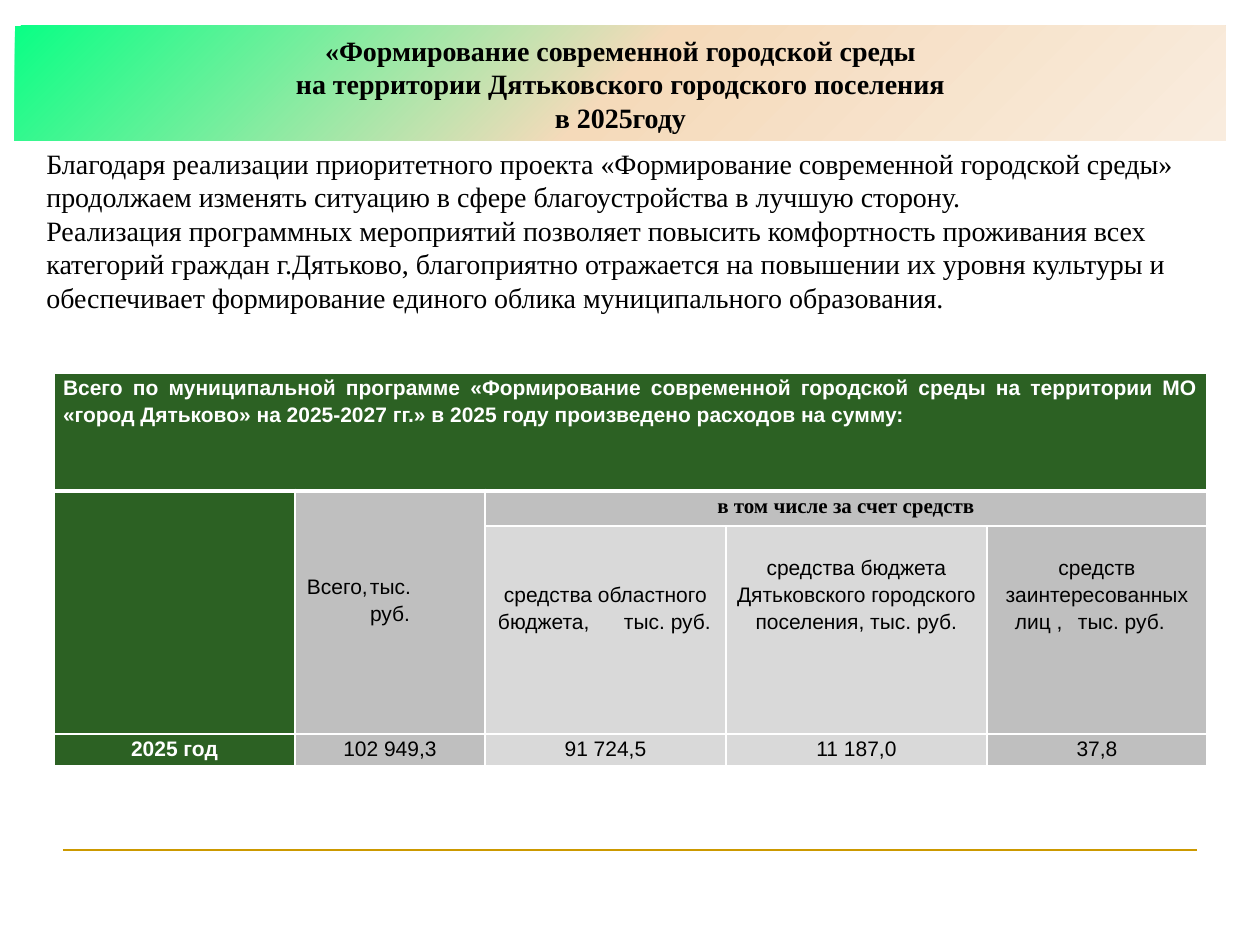
from copy import deepcopy

from lxml.etree import SubElement
from pptx import Presentation
from pptx.dml.color import RGBColor
from pptx.enum.shapes import MSO_CONNECTOR as Connector, MSO_SHAPE as Shape
from pptx.enum.text import MSO_ANCHOR as Anchor, PP_ALIGN as Align
from pptx.oxml.ns import qn
from pptx.util import Pt

PX = 914400 // 126
BLACK = RGBColor(0x00, 0x00, 0x00)
WHITE = RGBColor(0xFF, 0xFF, 0xFF)
GOLD = RGBColor(0xCC, 0x99, 0x00)
GREEN = RGBColor(0x2C, 0x61, 0x23)
GREY = RGBColor(0xBF, 0xBF, 0xBF)
LIGHT = RGBColor(0xD9, 0xD9, 0xD9)
MINT = RGBColor(0x0A, 0xFF, 0x85)
PEACH = RGBColor(0xF5, 0xDA, 0xBA)
CREAM = RGBColor(0xF9, 0xEC, 0xDE)
SERIF, SANS = "Times New Roman", "Arial"


def write(frame, lines, align, size, font, color, bold=False, spacing=None):
    """Write one paragraph per line; a line with a tab is (text, indent, stop)."""
    frame.word_wrap = True
    for index, line in enumerate(lines):
        paragraph = frame.paragraphs[0] if index == 0 else frame.add_paragraph()
        paragraph.alignment = align
        paragraph.line_spacing = spacing
        if isinstance(line, tuple):
            line, indent, stop = line
            paragraph.alignment = Align.LEFT
            properties = paragraph._p.get_or_add_pPr()
            properties.set("marL", str(indent * PX))
            properties.set("indent", "0")
            tabs = SubElement(properties, qn("a:tabLst"))
            SubElement(tabs, qn("a:tab"), pos=str(stop * PX), algn="l")
        run = paragraph.add_run()
        run.text = line
        run.font.name = font
        run.font.size = Pt(size)
        run.font.bold = bold
        run.font.color.rgb = color


def add_borders(cell, top, bottom):
    properties = cell._tc.get_or_add_tcPr()
    for side, width in (("L", 1), ("R", 1), ("T", top), ("B", bottom)):
        line = SubElement(properties, qn(f"a:ln{side}"), w=str(Pt(width)))
        fill = SubElement(line, qn("a:solidFill"))
        SubElement(fill, qn("a:srgbClr"), val=str(WHITE))


presentation = Presentation()
presentation.slide_width = 1260 * PX
presentation.slide_height = 945 * PX
slide = presentation.slides.add_slide(presentation.slide_layouts[6])

# Footer rule
rule = slide.shapes.add_connector(Connector.STRAIGHT, 63 * PX, 850 * PX, 1197 * PX, 850 * PX)
rule.line.color.rgb = GOLD
rule.line.width = Pt(1.5)
SubElement(rule._element.spPr, qn("a:effectLst"))

# Title banner with a three-stop gradient
banner = slide.shapes.add_shape(Shape.RECTANGLE, 15 * PX, 26 * PX, 1211 * PX, 115 * PX)
banner.shadow.inherit = False
banner.line.fill.background()
banner.fill.gradient()
banner.fill.gradient_angle = 315
stop_list = banner._element.spPr.find(qn("a:gradFill")).find(qn("a:gsLst"))
stop_list.append(deepcopy(stop_list[0]))
for stop, position, color in zip(banner.fill.gradient_stops, (0, 0.5, 1), (MINT, PEACH, CREAM)):
    stop.position = position
    stop.color.rgb = color
banner.text_frame.vertical_anchor = Anchor.MIDDLE
write(banner.text_frame, [
    "«Формирование современной городской среды",
    "на территории Дятьковского городского поселения",
    "в 2025году",
], Align.CENTER, 16, SERIF, BLACK, bold=True)

# Introduction
intro = slide.shapes.add_textbox(34 * PX, 140 * PX, 1191 * PX, 183 * PX)
write(intro.text_frame, [
    "Благодаря реализации приоритетного проекта «Формирование современной городской среды» "
    "продолжаем изменять ситуацию в сфере благоустройства в лучшую сторону.",
    "Реализация программных мероприятий позволяет повысить комфортность проживания всех "
    "категорий граждан г.Дятьково, благоприятно отражается на повышении их уровня культуры и "
    "обеспечивает формирование единого облика муниципального образования.",
], Align.LEFT, 16, SERIF, BLACK)

# Spending table
widths = [241, 190, 241, 261, 220]
heights = [118, 35, 208, 32]
table = slide.shapes.add_table(
    len(heights), len(widths), 54 * PX, 373 * PX, sum(widths) * PX, sum(heights) * PX).table
for column, width in zip(table.columns, widths):
    column.width = width * PX
for row, height in zip(table.rows, heights):
    row.height = height * PX

column_fills = [GREEN, GREY, LIGHT, LIGHT, GREY]
row_fills = [[GREEN] * 5, [GREEN] + [GREY] * 4, column_fills, column_fills]
for row, fills in enumerate(row_fills):
    for column, color in enumerate(fills):
        cell = table.cell(row, column)
        cell.margin_left = cell.margin_right = 9 * PX
        cell.margin_top = cell.margin_bottom = 0
        add_borders(cell, 3 if row == 1 else 1, 3 if row == 0 else 1)
        cell.fill.solid()
        cell.fill.fore_color.rgb = color
        cell.text_frame.paragraphs[0].font.size = Pt(12)

for first, last in (((0, 0), (0, 4)), ((1, 0), (2, 0)), ((1, 1), (2, 1)), ((1, 2), (1, 4))):
    table.cell(*first).merge(table.cell(*last))

# Table heading and group heading
write(table.cell(0, 0).text_frame, [
    "Всего по муниципальной программе «Формирование современной городской среды на территории МО "
    "«город Дятьково» на 2025-2027 гг.» в 2025 году произведено расходов на сумму:",
], Align.JUSTIFY, 12, SANS, WHITE, bold=True, spacing=1.15)
write(table.cell(1, 2).text_frame, ["в том числе за счет средств"],
      Align.CENTER, 12, SERIF, BLACK, bold=True, spacing=1.15)

# Column headings: row, column, lines of space above, text
LINE = 27
headings = [
    (1, 1, 3, [("Всего,\tтыс.", 3, 128), "руб."]),
    (2, 2, 2, ["средства областного", ("бюджета,\tтыс. руб.", 4, 130)]),
    (2, 3, 1, ["средства бюджета Дятьковского городского поселения, тыс. руб."]),
    (2, 4, 1, ["средств заинтересованных", ("лиц ,\tтыс. руб.", 19, 90)]),
]
for row, column, lines_above, lines in headings:
    cell = table.cell(row, column)
    cell.margin_top = lines_above * LINE * PX
    write(cell.text_frame, lines, Align.CENTER, 12, SANS, BLACK, spacing=1.15)

# Year row
for column, text in enumerate(["2025 год", "102 949,3", "91 724,5", "11 187,0", "37,8"]):
    is_label = column == 0
    write(table.cell(3, column).text_frame, [text], Align.CENTER, 12, SANS,
          WHITE if is_label else BLACK, bold=is_label, spacing=1.15)

presentation.save("out.pptx")
